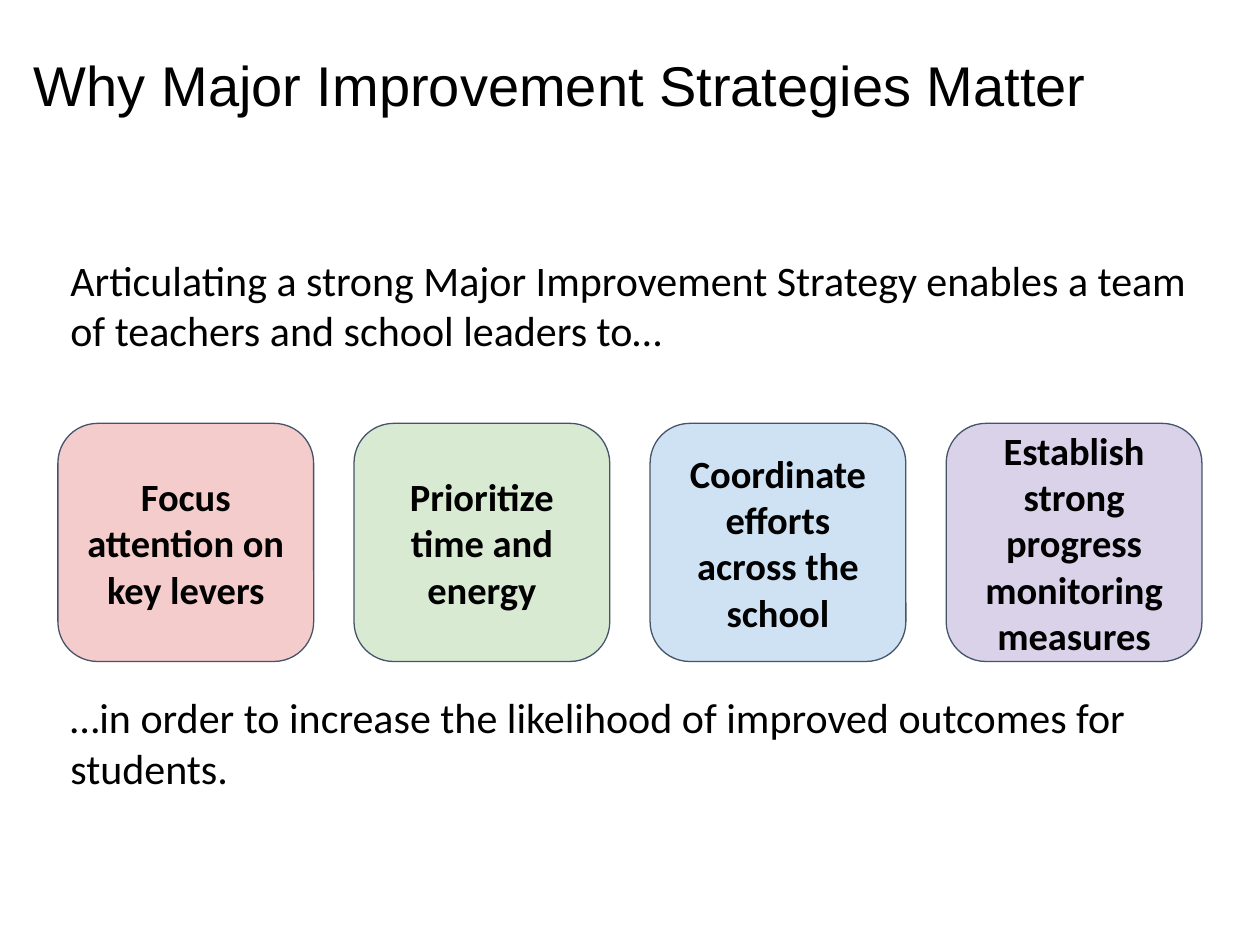
from dataclasses import dataclass

from pptx import Presentation
from pptx.dml.color import RGBColor
from pptx.enum.shapes import MSO_SHAPE
from pptx.enum.text import MSO_ANCHOR, PP_ALIGN
from pptx.util import Inches, Pt

ROUNDED = MSO_SHAPE.ROUNDED_RECTANGLE
TOP, MIDDLE = MSO_ANCHOR.TOP, MSO_ANCHOR.MIDDLE
LEFT, CENTER = PP_ALIGN.LEFT, PP_ALIGN.CENTER
BLANK_LAYOUT = 6


@dataclass(frozen=True)
class Theme:
    title_font: str = "Arial"
    body_font: str = "Calibri"
    title_size: int = 32
    body_size: int = 24
    card_size: int = 22
    text: str = "000000"
    outline: str = "44546A"
    pink: str = "F4CCCC"
    green: str = "D9EAD3"
    blue: str = "CFE2F3"
    purple: str = "D9D2E9"


class SlideBuilder:
    def __init__(self, s, theme):
        self.s = s
        self.theme = theme

    def set_text(self, sp, text, font, size, bold=False, align=LEFT, anchor=TOP, inset=0.1):
        tf = sp.text_frame
        tf.word_wrap = True
        tf.vertical_anchor = anchor
        tf.margin_left = tf.margin_right = Inches(inset)
        tf.margin_top = tf.margin_bottom = Inches(inset)
        p = tf.paragraphs[0]
        p.alignment = align
        r = p.add_run()
        r.text = text
        r.font.name = font
        r.font.size = Pt(size)
        r.font.bold = bold
        r.font.color.rgb = RGBColor.from_string(self.theme.text)

    def title(self, text, x, y, w, h):
        sp = self.s.shapes.add_textbox(Inches(x), Inches(y), Inches(w), Inches(h))
        self.set_text(sp, text, self.theme.title_font, self.theme.title_size,
                      anchor=MIDDLE, inset=0)

    def body(self, text, x, y, w, h):
        sp = self.s.shapes.add_textbox(Inches(x), Inches(y), Inches(w), Inches(h))
        self.set_text(sp, text, self.theme.body_font, self.theme.body_size)

    def card(self, text, fill, x, y, w, h):
        sp = self.s.shapes.add_shape(ROUNDED, Inches(x), Inches(y), Inches(w), Inches(h))
        sp.shadow.inherit = False
        sp.fill.solid()
        sp.fill.fore_color.rgb = RGBColor.from_string(fill)
        sp.line.color.rgb = RGBColor.from_string(self.theme.outline)
        sp.line.width = Pt(0.75)
        self.set_text(sp, text, self.theme.body_font, self.theme.card_size,
                      bold=True, align=CENTER, anchor=MIDDLE)


def main():
    prs = Presentation()
    prs.slide_width, prs.slide_height = Inches(10), Inches(7.5)
    theme = Theme()
    slide = SlideBuilder(prs.slides.add_slide(prs.slide_layouts[BLANK_LAYOUT]), theme)
    margin, content_w = 0.46, 9.08

    # Title and lead-in
    slide.title("Why Major Improvement Strategies Matter", 0.27, 0.36, 9.5, 0.62)
    slide.body("Articulating a strong Major Improvement Strategy enables a team "
               "of teachers and school leaders to…", margin, 1.92, content_w, 1.01)

    # Row of benefit cards, evenly spread across the content width
    cards = [
        ("Focus attention on key levers", theme.pink),
        ("Prioritize time and energy", theme.green),
        ("Coordinate efforts across the school", theme.blue),
        ("Establish strong progress monitoring measures", theme.purple),
    ]
    card_w = 2.03
    pitch = (content_w - card_w) / (len(cards) - 1)
    for i, (text, fill) in enumerate(cards):
        slide.card(text, fill, margin + i * pitch, 3.36, card_w, 1.89)

    # Closing line
    slide.body("…in order to increase the likelihood of improved outcomes for students.",
               margin, 5.39, content_w, 1.01)

    prs.save("out.pptx")


if __name__ == "__main__":
    main()
